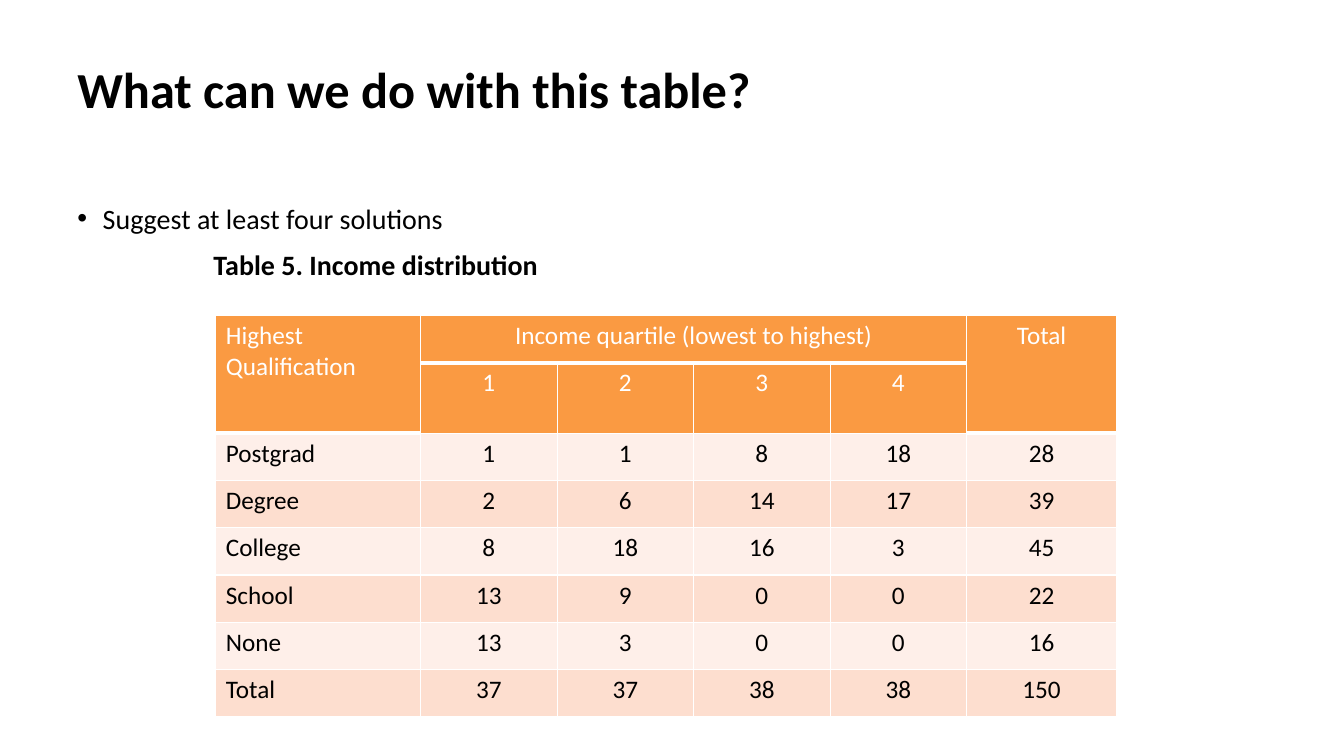
from dataclasses import dataclass

from lxml.etree import SubElement
from pptx import Presentation
from pptx.dml.color import RGBColor as RGB
from pptx.enum.text import MSO_AUTO_SIZE as AutoSize, PP_ALIGN as Align
from pptx.oxml.ns import qn
from pptx.util import Cm, Pt


@dataclass
class Theme:
    font: str = "Calibri"
    text: str = "000000"
    white: str = "FFFFFF"
    header: str = "FA9A42"
    bands: tuple = ("FEEFE9", "FDDECF")
    title_size: int = 36
    body_size: int = 20
    cell_size: int = 18


theme = Theme()


def style(p, size, color, bold=False):
    for r in p.runs:
        r.font.name = theme.font
        r.font.size = Pt(size)
        r.font.bold = bold
        r.font.color.rgb = RGB.from_string(color)


def add_text(s, box, text, size, bold=False):
    sp = s.shapes.add_textbox(*map(Cm, box))
    tf = sp.text_frame
    tf.word_wrap = True
    tf.text = text
    p = tf.paragraphs[0]
    style(p, size, theme.text, bold)
    return sp, p


prs = Presentation()
prs.slide_width, prs.slide_height = Cm(33.87), Cm(19.05)
s = prs.slides.add_slide(prs.slide_layouts[6])

sp, p = add_text(s, (1.7, 1.52, 29.59, 3.15), "What can we do with this table?", theme.title_size, True)
p.line_spacing = 0.9

sp, p = add_text(s, (1.7, 4.78, 29.59, 12.75), "Suggest at least four solutions", theme.body_size)
p.line_spacing = 1.2
p.space_before = Pt(10)
pPr = p._p.get_or_add_pPr()
pPr.set("marL", str(Cm(0.64)))
pPr.set("indent", str(-Cm(0.64)))
SubElement(pPr, qn("a:buFont"), typeface="Arial")
SubElement(pPr, qn("a:buChar"), char="•")

rows = [
    ("Highest Qualification", "Income quartile (lowest to highest)", "", "", "", "Total"),
    ("", "1", "2", "3", "4", ""),
    ("Postgrad", "1", "1", "8", "18", "28"),
    ("Degree", "2", "6", "14", "17", "39"),
    ("College", "8", "18", "16", "3", "45"),
    ("School", "13", "9", "0", "0", "22"),
    ("None", "13", "3", "0", "0", "16"),
    ("Total", "37", "37", "38", "38", "150"),
]
col_widths = [5.16] + [3.44] * 4 + [3.78]
row_heights = [1.19, 1.09] + [1.19] * 6
frame = s.shapes.add_table(
    len(rows), len(col_widths), Cm(5.44), Cm(7.95), Cm(sum(col_widths)), Cm(sum(row_heights))
)
table = frame.table
table.first_row = table.horz_banding = False
for col, width in zip(table.columns, col_widths):
    col.width = Cm(width)
for row, height in zip(table.rows, row_heights):
    row.height = Cm(height)

for first, last in [((0, 0), (1, 0)), ((0, 1), (0, 4)), ((0, 5), (1, 5))]:
    table.cell(*first).merge(table.cell(*last))

for i, values in enumerate(rows):
    is_header = i < 2
    fill = theme.header if is_header else theme.bands[i % 2]
    for j, value in enumerate(values):
        cell = table.cell(i, j)
        tcPr = cell._tc.get_or_add_tcPr()
        for side in "LRTB":
            width = 3 if i == 0 and side == "B" else 1
            ln = SubElement(tcPr, qn(f"a:ln{side}"), w=str(Pt(width)))
            SubElement(SubElement(ln, qn("a:solidFill")), qn("a:srgbClr"), val=theme.white)
        cell.fill.solid()
        cell.fill.fore_color.rgb = RGB.from_string(fill)
        if value:
            p = cell.text_frame.paragraphs[0]
            p.text = value
            p.alignment = Align.CENTER if j else Align.LEFT
            style(p, theme.cell_size, theme.white if is_header else theme.text)

sp, p = add_text(s, (5.13, 6.12, 22.28, 1.12), "Table 5. Income distribution", theme.body_size, True)
sp.text_frame.auto_size = AutoSize.SHAPE_TO_FIT_TEXT

prs.save("out.pptx")
